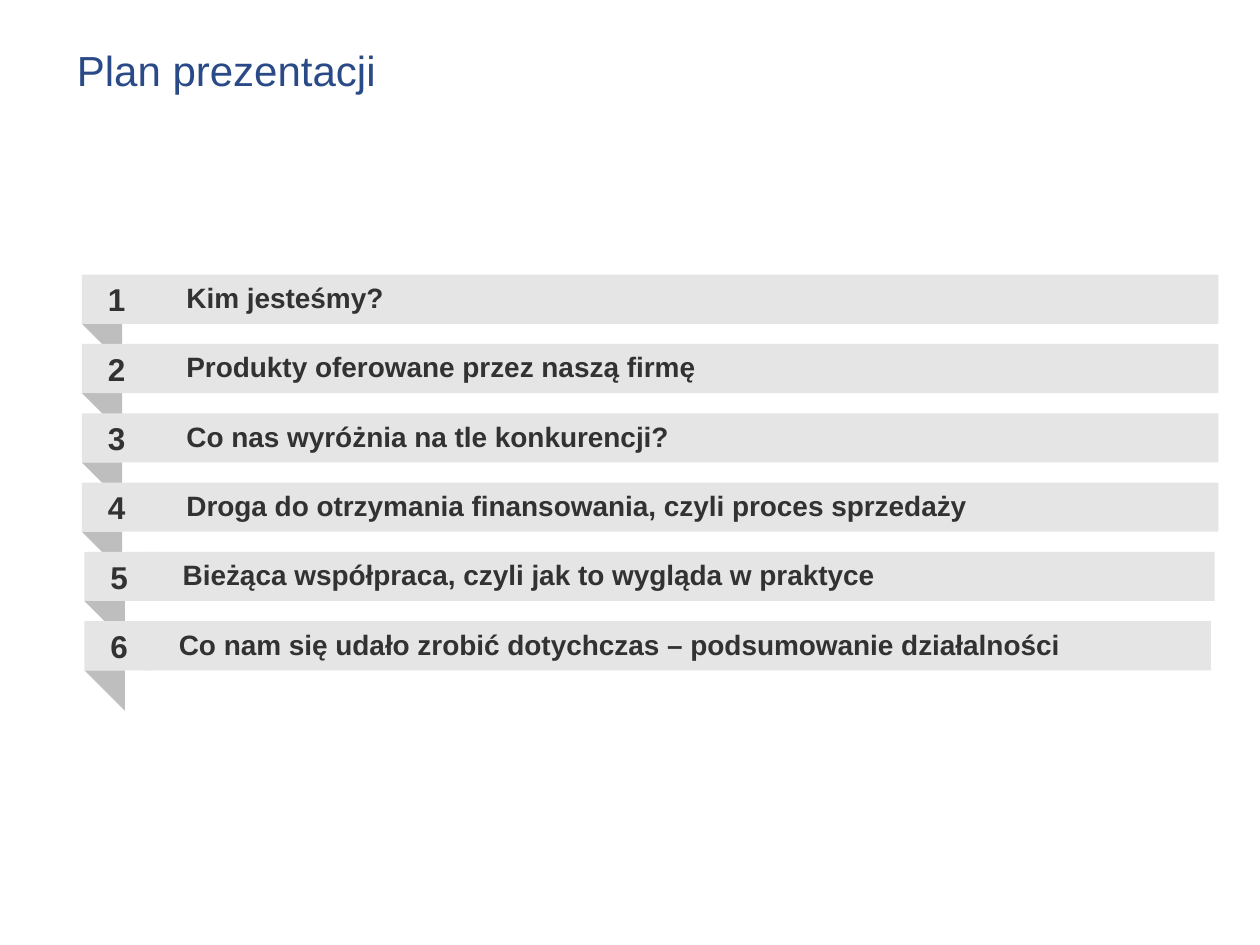
from pptx import Presentation
from pptx.dml.color import RGBColor
from pptx.enum import shapes, text
from pptx.util import Inches, Pt

BLUE = RGBColor(0x2A, 0x4A, 0x87)
DARK = RGBColor(0x32, 0x32, 0x32)
LIGHT = RGBColor(0xE5, 0xE5, 0xE5)
GREY = RGBColor(0xBE, 0xBE, 0xBE)

TOP, STEP, HIGH = 2.18, 0.55, 0.39
WIDE, TAB, FOLD = 8.47, 0.55, 0.32

# Label, left of number, left of bar
ITEMS = [
    ("Kim jesteśmy?", 0.65, 1.2),
    ("Produkty oferowane przez naszą firmę", 0.65, 1.2),
    ("Co nas wyróżnia na tle konkurencji?", 0.65, 1.2),
    ("Droga do otrzymania finansowania, czyli proces sprzedaży", 0.65, 1.2),
    ("Bieżąca współpraca, czyli jak to wygląda w praktyce", 0.67, 1.17),
    ("Co nam się udało zrobić dotychczas – podsumowanie działalności", 0.67, 1.14),
]


def add_box(slide, kind, x, y, w, h, color):
    box = slide.shapes.add_shape(kind, Inches(x), Inches(y), Inches(w), Inches(h))
    box.shadow.inherit = False
    box.fill.solid()
    box.fill.fore_color.rgb = color
    box.line.fill.background()
    return box


def write(box, words, size, color, pads, anchor, align=text.PP_ALIGN.LEFT, bold=True):
    frame = box.text_frame
    frame.word_wrap = True
    frame.vertical_anchor = anchor
    (frame.margin_left, frame.margin_top,
     frame.margin_right, frame.margin_bottom) = map(Inches, pads)
    para = frame.paragraphs[0]
    para.text = words
    para.alignment = align
    para.font.name = "Arial"
    para.font.size = Pt(size)
    para.font.bold = bold
    para.font.color.rgb = color


def add_title(slide, words):
    box = slide.shapes.add_textbox(Inches(0.61), Inches(0.16), Inches(6.61), Inches(0.59))
    write(box, words, 24, BLUE, (0, 0.05, 0, 0), text.MSO_ANCHOR.BOTTOM, bold=False)


def add_fold(slide, x, y):
    fold = add_box(slide, shapes.MSO_SHAPE.RIGHT_TRIANGLE, x, y, FOLD, FOLD, GREY)
    fold.rotation = 180


def add_item(slide, num, label, left, start, y):
    rect = shapes.MSO_SHAPE.RECTANGLE
    bar = add_box(slide, rect, start, y, WIDE, HIGH, LIGHT)
    write(bar, label, 16, DARK, (0.28, 0.05, 0.1, 0.08), text.MSO_ANCHOR.MIDDLE)
    tab = add_box(slide, rect, left, y, TAB, HIGH, LIGHT)
    write(tab, str(num), 18, DARK, (0.08, 0.04, 0.08, 0.04),
          text.MSO_ANCHOR.MIDDLE, text.PP_ALIGN.CENTER)


def main():
    deck = Presentation()
    deck.slide_width, deck.slide_height = Inches(10), Inches(7.5)
    slide = deck.slides.add_slide(deck.slide_layouts[6])
    add_title(slide, "Plan prezentacji")

    # Folds lie behind the bars
    for i, (_, left, _) in enumerate(ITEMS):
        add_fold(slide, left, TOP + i * STEP + HIGH)

    # Numbered agenda bars
    for i, (label, left, start) in enumerate(ITEMS):
        add_item(slide, i + 1, label, left, start, TOP + i * STEP)

    deck.save("out.pptx")


if __name__ == "__main__":
    main()
